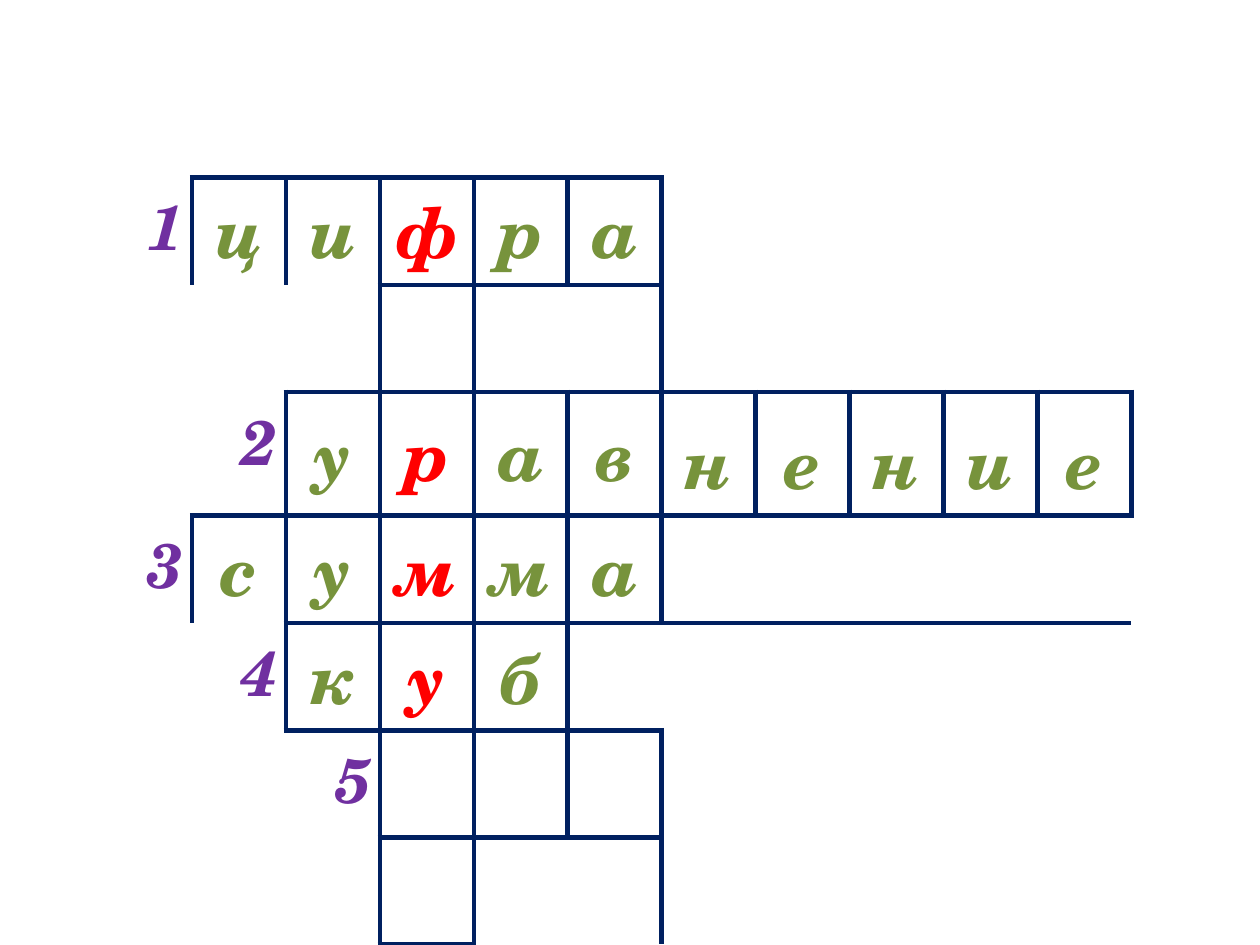
from lxml import etree
from pptx import Presentation
from pptx.dml.color import RGBColor
from pptx.enum import text
from pptx.oxml import ns
from pptx.util import Inches, Pt

COLORS = {"line": "002060", "number": "7030A0", "letter": "77933C", "key": "FF0000"}
FONT = {"name": "TeX Gyre Schola", "bold": True, "italic": True}
INSETS = {"margin_left": Inches(0.07), "margin_right": Inches(0.07),
          "margin_top": 0, "margin_bottom": 0}
COLUMNS, KEY_COLUMN = 11, 3
ROW_HEIGHTS = [0.85, 0.85, 0.98, 0.85, 0.85, 0.85, 0.85]

# Each answer: row, first column, cells, letters
ANSWERS = [(0, 1, 5, "цифра"), (2, 2, 9, "уравнение"), (3, 1, 5, "сумма"),
           (4, 2, 3, "куб"), (5, 3, 3, "")]
NUMBER_CELLS = [(0, 0), (2, 0), (3, 0), (4, 0), (5, 2)]
LINK_CELLS = [(1, 3), (6, 3)]
# Each blank area: row, column, rows, columns, bordered sides
BLANKS = [(0, 6, 2, 4, "LB"), (0, 10, 2, 1, "B"), (1, 0, 1, 3, "R"),
          (1, 4, 1, 2, "LTB"), (2, 0, 1, 2, "R"), (3, 6, 1, 5, "LT"),
          (4, 0, 1, 2, "R"), (4, 5, 1, 6, "LTB"), (5, 0, 1, 2, ""),
          (5, 2, 2, 1, "TR"), (5, 6, 2, 5, "L"), (6, 0, 1, 2, ""),
          (6, 4, 1, 2, "LT"), (0, 0, 1, 1, "R"), (3, 0, 1, 1, "R")]


def set_borders(cell, sides):
    """Draw the given sides of a cell and clear the others."""
    properties = cell._tc.get_or_add_tcPr()
    for side in "LRTB":
        line = etree.SubElement(properties, ns.qn(f"a:ln{side}"), w=str(Pt(3)))
        if side in sides:
            fill = etree.SubElement(line, ns.qn("a:solidFill"))
            etree.SubElement(fill, ns.qn("a:srgbClr"), val=COLORS["line"])
        else:
            etree.SubElement(line, ns.qn("a:noFill"))
    cell.fill.background()


def write(cell, symbol, role, size, align, anchor, spacing=None):
    """Write one symbol in a cell."""
    for name, value in {**INSETS, "vertical_anchor": anchor}.items():
        setattr(cell, name, value)
    paragraph = cell.text_frame.paragraphs[0]
    paragraph.alignment = align
    paragraph.line_spacing = spacing
    run = paragraph.add_run()
    run.text = symbol
    for name, value in {**FONT, "size": Pt(size)}.items():
        setattr(run.font, name, value)
    run.font.color.rgb = RGBColor.from_string(COLORS[role])


def add_blank(table, row, column, rows, columns, sides):
    """Merge one blank area and border its outer edges."""
    last_row, last_column = row + rows - 1, column + columns - 1
    if rows * columns > 1:
        table.cell(row, column).merge(table.cell(last_row, last_column))
    for r in range(row, last_row + 1):
        for c in range(column, last_column + 1):
            outer = {"L": c == column, "R": c == last_column,
                     "T": r == row, "B": r == last_row}
            set_borders(table.cell(r, c), [side for side in sides if outer[side]])


def add_answer(table, row, first, length, letters):
    """Border the cells of one answer and write its letters."""
    for column in range(first, first + length):
        set_borders(table.cell(row, column), "LRTB")
    for column, letter in enumerate(letters, first):
        write(table.cell(row, column), letter,
              "key" if column == KEY_COLUMN else "letter", 40,
              text.PP_ALIGN.CENTER, text.MSO_ANCHOR.MIDDLE,
              1.15 if column > 5 else None)


def add_crossword(slide, left, top, width, height):
    """Build the crossword table in the given box."""
    table = slide.shapes.add_table(len(ROW_HEIGHTS), COLUMNS, left, top, width, height).table
    for name in ("first_row", "horz_banding"):
        setattr(table, name, False)
    for column in table.columns:
        column.width = int(width / COLUMNS)
    for row, row_height in zip(table.rows, ROW_HEIGHTS):
        row.height = int(height * row_height / sum(ROW_HEIGHTS))
    for blank in BLANKS:
        add_blank(table, *blank)
    for answer in ANSWERS:
        add_answer(table, *answer)
    for position in LINK_CELLS:
        set_borders(table.cell(*position), "LRTB")
    for number, position in enumerate(NUMBER_CELLS, 1):
        write(table.cell(*position), str(number), "number", 36,
              text.PP_ALIGN.RIGHT, text.MSO_ANCHOR.TOP)


def main():
    """Create the presentation and save it."""
    presentation = Presentation()
    presentation.slide_width, presentation.slide_height = Inches(10), Inches(7.5)
    slide = presentation.slides.add_slide(presentation.slide_layouts[6])
    add_crossword(slide, Inches(0.78), Inches(1.41), Inches(8.2), Inches(sum(ROW_HEIGHTS)))
    presentation.save("out.pptx")


if __name__ == "__main__":
    main()
